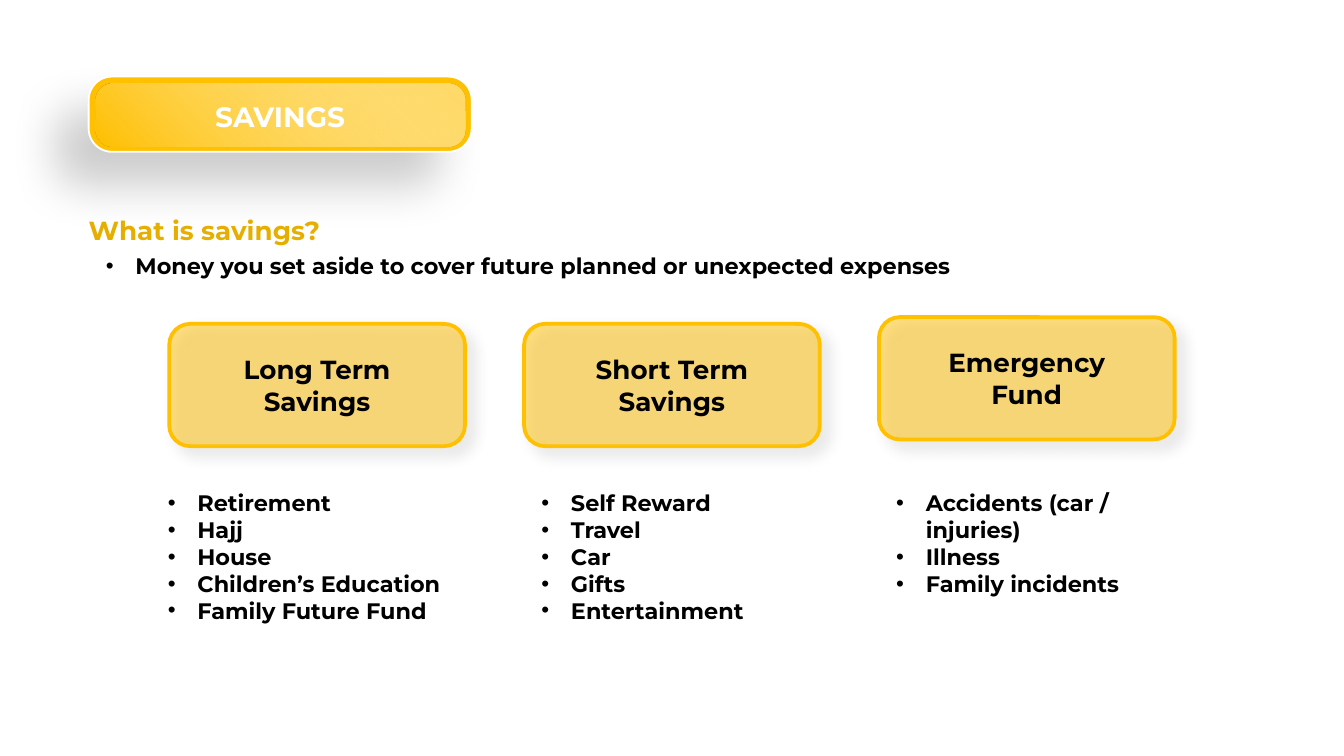
import pptx
import pptx.util
import pptx.dml.color
import pptx.enum.shapes
import pptx.enum.text
import pptx.oxml.ns
import lxml.etree

Inches = pptx.util.Inches
Pt = pptx.util.Pt
ALIGN = pptx.enum.text.PP_ALIGN
ANCHOR = pptx.enum.text.MSO_ANCHOR
COLORS = {"gold": "FFC000", "heading": "E6AF00", "white": "FFFFFF", "black": "000000"}
FONT = "Montserrat"


def rgb(name):
    return pptx.dml.color.RGBColor.from_string(COLORS[name])


def add_xml(parent, tag, **attributes):
    child = lxml.etree.SubElement(parent, pptx.oxml.ns.qn(tag))
    for key, value in attributes.items():
        child.set(key, str(value))
    return child


def set_alpha(color_element, percent):
    add_xml(color_element, "a:alpha", val=percent * 1000)


def add_bullet(paragraph):
    paragraph.level = 1
    properties = paragraph._p.get_or_add_pPr()
    properties.set("marL", str(Inches(0.25)))
    properties.set("indent", str(Inches(-0.22)))
    bullet_color = add_xml(properties, "a:buClr")
    add_xml(bullet_color, "a:srgbClr", val=COLORS["black"])
    add_xml(properties, "a:buFont", typeface="Arial")
    add_xml(properties, "a:buChar", char="•")


def write_text(holder, lines, size=12, color="black", align=ALIGN.LEFT,
               anchor=ANCHOR.TOP, insets=(0.1, 0.1), bullets=False):
    frame = holder.text_frame
    frame.word_wrap = True
    frame.auto_size = pptx.enum.text.MSO_AUTO_SIZE.SHAPE_TO_FIT_TEXT
    frame.vertical_anchor = anchor
    frame.margin_left = frame.margin_right = Inches(insets[0])
    frame.margin_top = frame.margin_bottom = Inches(insets[1])
    for index, line in enumerate(lines):
        paragraph = frame.paragraphs[0] if index == 0 else frame.add_paragraph()
        paragraph.alignment = align
        run = paragraph.add_run()
        run.text = line
        run.font.name = FONT
        run.font.size = Pt(size)
        run.font.bold = True
        run.font.color.rgb = rgb(color)
        if bullets:
            add_bullet(paragraph)


def add_text(slide, left, top, width, height, lines, **style):
    box = slide.shapes.add_textbox(Inches(left), Inches(top), Inches(width), Inches(height))
    write_text(box, lines, **style)


def add_panel(shapes, left, top, width, height, rounding):
    panel = shapes.add_shape(pptx.enum.shapes.MSO_SHAPE.ROUNDED_RECTANGLE,
                             Inches(left), Inches(top), Inches(width), Inches(height))
    panel.adjustments[0] = rounding
    panel.shadow.inherit = False
    panel.fill.solid()
    panel.fill.fore_color.rgb = rgb("gold")
    panel.line.fill.background()
    return panel


def outline(panel, color, width):
    panel.line.color.rgb = rgb(color)
    panel.line.width = Pt(width)


def cast_shadow(panel, opacity, blur, distance, angle):
    effects = panel.element.spPr.find(pptx.oxml.ns.qn("a:effectLst"))
    shadow = add_xml(effects, "a:outerShdw", blurRad=Pt(blur), dist=Pt(distance),
                     dir=angle * 60000, algn="ctr", rotWithShape=0)
    set_alpha(add_xml(shadow, "a:srgbClr", val=COLORS["black"]), opacity)


def title_banner(slide, left, top, width, height, text):
    base = add_panel(slide.shapes, left, top, width, height, 0.31)
    outline(base, "white", 1)
    cast_shadow(base, 20, 25, 25, 135)

    sheen = add_panel(slide.shapes, left + 0.05, top + 0.05, width - 0.1, height - 0.09, 0.28)
    sheen.fill.gradient()
    sheen.fill.gradient_angle = 45
    start, end = sheen.fill.gradient_stops
    start.color.rgb, start.position = rgb("gold"), 0
    end.color.rgb, end.position = rgb("white"), 0.97
    end_color = list(sheen.element.spPr.iter(pptx.oxml.ns.qn("a:srgbClr")))[-1]
    set_alpha(end_color, 41)

    title = slide.shapes.title
    title.left, title.top = Inches(left + 0.05), Inches(top + 0.13)
    title.width, title.height = Inches(width - 0.1), Inches(0.33)
    write_text(title, [text], size=15, color="white", align=ALIGN.CENTER,
               anchor=ANCHOR.MIDDLE, insets=(0.07, 0.04))
    slide.shapes.element.append(title.element)


def definition(slide, left, top, width, question, answer):
    add_text(slide, left, top, 2.3, 0.24, [question], size=14, color="heading",
             anchor=ANCHOR.MIDDLE, insets=(0, 0))
    add_text(slide, left, top + 0.19, width, 0.4, [answer], bullets=True)


def savings_card(slide, left, top, width, height, heading):
    card = add_panel(slide.shapes, left, top, width, height, 0.17)
    set_alpha(card.element.spPr.find(".//" + pptx.oxml.ns.qn("a:srgbClr")), 50)
    outline(card, "gold", 2)
    cast_shadow(card, 15, 8, 6, 45)
    add_text(slide, left + 0.17, top + 0.18, width - 0.34, 0.55, heading,
             size=14, align=ALIGN.CENTER, insets=(0.07, 0.04))


def main():
    deck = pptx.Presentation()
    deck.slide_width = Inches(10)
    deck.slide_height = deck.slide_width * 9 // 16
    slide = deck.slides.add_slide(deck.slide_layouts[5])

    title_banner(slide, 0.66, 0.57, 2.85, 0.56, "SAVINGS")
    definition(slide, 0.66, 1.59, 7.77, "What is savings?",
               "Money you set aside to cover future planned or unexpected expenses")

    columns = [
        (["Long Term Savings"], 2.41, 1.12, 1.21,
         ["Retirement", "Hajj", "House", "Children’s Education", "Family Future Fund"]),
        (["Short Term", "Savings"], 2.41, 3.9, 1.21,
         ["Self Reward", "Travel", "Car", "Gifts", "Entertainment"]),
        (["Emergency Fund"], 2.36, 6.54, 1.01,
         ["Accidents (car / injuries)", "Illness", "Family incidents"]),
    ]
    for index, (heading, card_top, list_left, list_height, examples) in enumerate(columns):
        savings_card(slide, 1.26 + index * 2.64, card_top, 2.2, 0.91, heading)
        add_text(slide, list_left, 3.54, 2.39, list_height, examples, bullets=True)

    deck.save("out.pptx")


if __name__ == "__main__":
    main()
